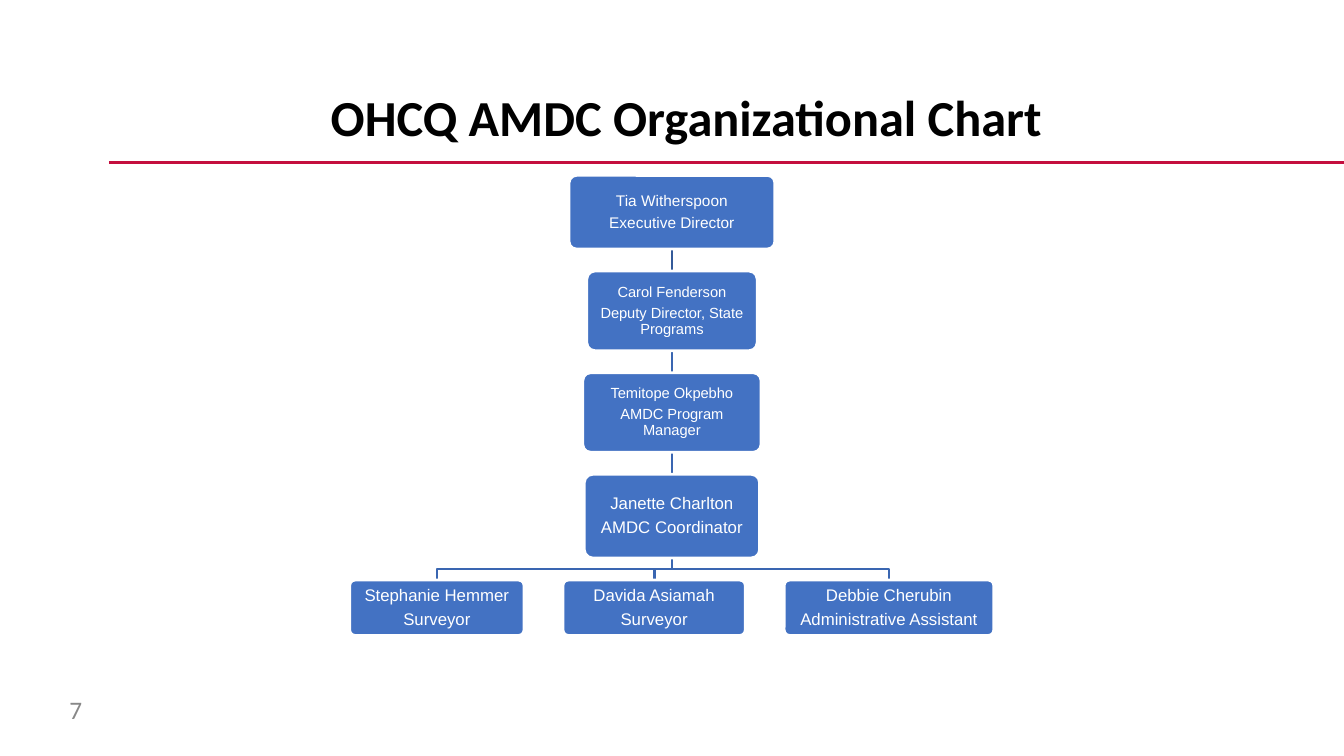
from pptx import Presentation
from pptx.dml.color import RGBColor
from pptx.enum.shapes import MSO_CONNECTOR, MSO_SHAPE
from pptx.enum.text import MSO_ANCHOR, PP_ALIGN
from pptx.util import Pt
from lxml.etree import SubElement
from pptx.oxml.ns import qn

RED = RGBColor(0xC4, 0x0E, 0x3E)
BLUE = RGBColor(0x43, 0x72, 0xC3)
NAVY = RGBColor(0x34, 0x5A, 0x99)
LINK = RGBColor(0x3A, 0x66, 0xB1)
WHITE = RGBColor(0xFF, 0xFF, 0xFF)
BLACK = RGBColor(0, 0, 0)
GREY = RGBColor(0x88, 0x88, 0x88)

deck = Presentation()
deck.slide_width, deck.slide_height = Pt(960), Pt(540)
slide = deck.slides.add_slide(deck.slide_layouts[5])
shapes = slide.shapes


def draw_line(x1, y1, x2, y2, color, width):
    line = shapes.add_connector(MSO_CONNECTOR.STRAIGHT, Pt(x1), Pt(y1), Pt(x2), Pt(y2))
    line.line.color.rgb = color
    line.line.width = Pt(width)
    SubElement(line._element.spPr, qn("a:effectLst"))


def set_text(shape, lines, inset, look, align, space=0, lead=1.0):
    frame = shape.text_frame
    form = {"word_wrap": True, "vertical_anchor": MSO_ANCHOR.MIDDLE,
            "margin_left": Pt(inset), "margin_right": Pt(inset),
            "margin_top": Pt(3.6), "margin_bottom": Pt(3.6)}
    for key, value in form.items():
        setattr(frame, key, value)
    frame.text = "\n".join(lines)
    for index, para in enumerate(frame.paragraphs):
        para.alignment = align
        para.line_spacing = lead
        para.space_before = Pt(space if index else 0)
        for key, value in look.items():
            setattr(para.font, key, value)
        para.font.color.rgb = WHITE


draw_line(77.8, 115.9, 960, 115.9, RED, 2.25)

title = shapes.title
place = {"left": 76.3, "top": 46.8, "width": 828, "height": 78.5}
for key, value in place.items():
    setattr(title, key, Pt(value))
set_text(title, ["OHCQ AMDC Organizational Chart"], 7.2,
         {"name": "Calibri", "size": Pt(36), "bold": True}, PP_ALIGN.CENTER, lead=0.9)
title.text_frame.paragraphs[0].font.color.rgb = BLACK

page = shapes.add_textbox(Pt(42.5), Pt(492.5), Pt(42.5), Pt(28.8))
set_text(page, ["7"], 7.2, {"name": "Calibri", "size": Pt(18)}, PP_ALIGN.LEFT)
page.text_frame.paragraphs[0].font.color.rgb = GREY

MID, GAP = 480, 15.7
chain = [
    (147, 52.6, 11, "Tia Witherspoon", "Executive Director"),
    (121.7, 56.9, 10.5, "Carol Fenderson", "Deputy Director, State Programs"),
    (127.4, 56.9, 10.5, "Temitope Okpebho", "AMDC Program Manager"),
    (125.3, 59.8, 12, "Janette Charlton", "AMDC Coordinator"),
]
team = [
    (124.6, "Stephanie Hemmer", "Surveyor"),
    (130.3, "Davida Asiamah", "Surveyor"),
    (149.8, "Debbie Cherubin", "Administrative Assistant"),
]

boxes = []
top = 125.3
for level, (width, height, size, name, role) in enumerate(chain):
    if level:
        draw_line(MID, top - GAP, MID, top, LINK if level > 1 else NAVY, 2)
    boxes.append((MID - width / 2, top, width, height, size, name, role))
    top += height + GAP

left = 249.8
for width, name, role in team:
    end = left + width / 2
    bend = top - GAP / 2
    route = [(MID, bend), (end, bend), (end, top)]
    build = shapes.build_freeform(Pt(MID), Pt(top - GAP))
    build.add_line_segments([(Pt(x), Pt(y)) for x, y in route], close=False)
    elbow = build.convert_to_shape()
    elbow.fill.background()
    elbow.line.color.rgb = LINK
    elbow.line.width = Pt(2)
    elbow.shadow.inherit = False
    boxes.append((left, top, width, 39.6, 12, name, role))
    left += width + 27.7

for left, top, width, height, size, name, role in boxes:
    box = shapes.add_shape(MSO_SHAPE.ROUNDED_RECTANGLE, Pt(left), Pt(top), Pt(width), Pt(height))
    box.adjustments[0] = 0.1
    box.shadow.inherit = False
    box.fill.solid()
    box.fill.fore_color.rgb = BLUE
    box.line.color.rgb = WHITE
    box.line.width = Pt(2)
    set_text(box, [name, role], 6, {"name": "Arial", "size": Pt(size)},
             PP_ALIGN.CENTER, size * 0.35, 0.9)

deck.save("out.pptx")
